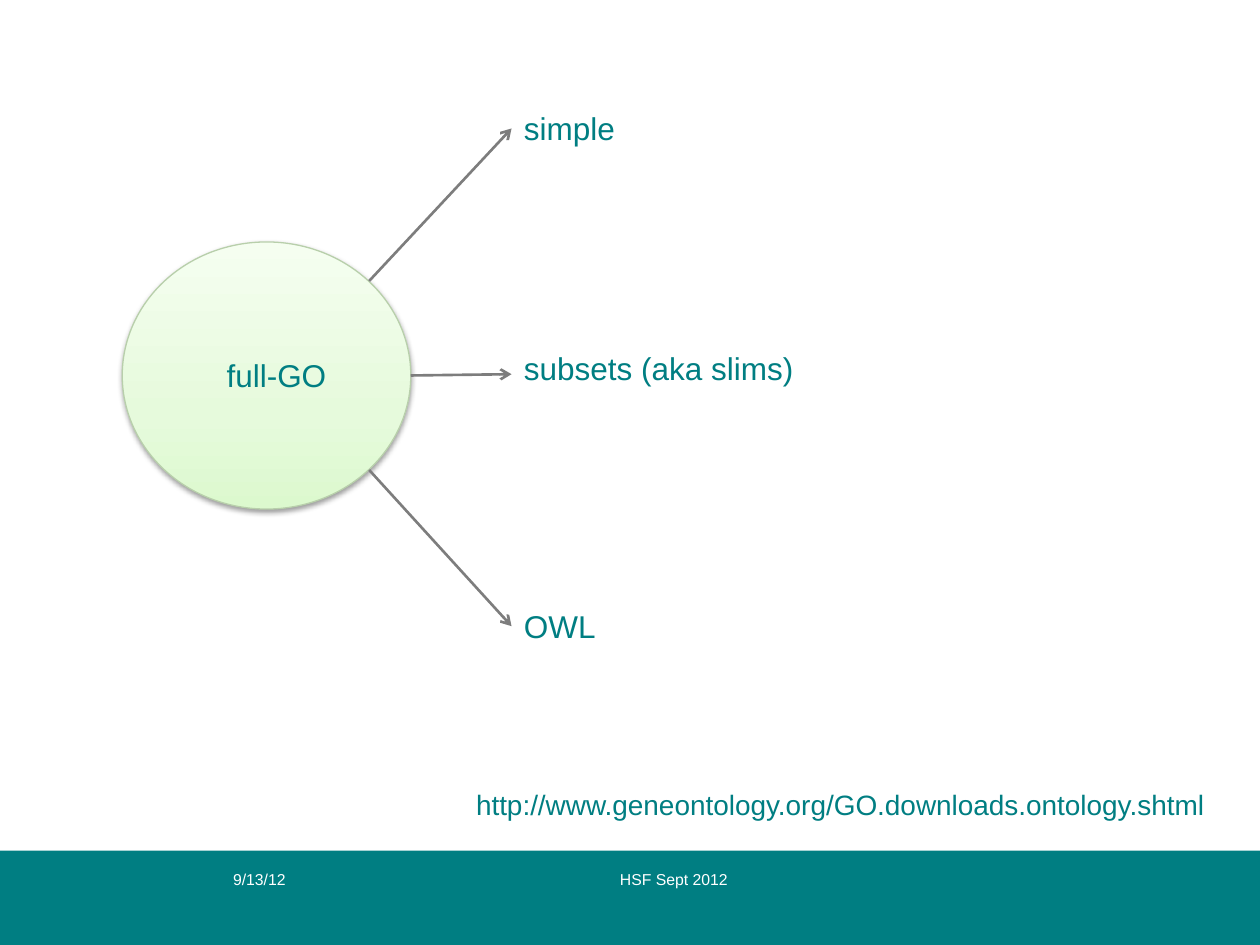
from dataclasses import dataclass

from lxml import etree
from pptx import Presentation
from pptx.dml.color import RGBColor
from pptx.enum.shapes import MSO_CONNECTOR, MSO_SHAPE
from pptx.enum.text import MSO_AUTO_SIZE
from pptx.oxml.ns import qn
from pptx.util import Inches, Pt

STRAIGHT = MSO_CONNECTOR.STRAIGHT
RECT = MSO_SHAPE.RECTANGLE
DISC = MSO_SHAPE.FLOWCHART_CONNECTOR
GROW = MSO_AUTO_SIZE.SHAPE_TO_FIT_TEXT
LEFT = 1


@dataclass(frozen=True)
class Theme:
    font: str = "Arial"
    teal: str = "007E82"
    white: str = "FFFFFF"
    gray: str = "7D7D7D"
    edge: str = "B8CFAB"
    shade: str = "000000"
    stops: tuple = ((0, "DCF9CE"), (35, "E6FADC"), (100, "F5FEF0"))
    body: int = 18
    link: int = 16
    foot: int = 9


def rgb(code):
    return RGBColor.from_string(code)


def node(parent, tag, **attrs):
    return etree.SubElement(parent, qn(tag), {k: str(v) for k, v in attrs.items()})


class Deck:
    def __init__(self, theme):
        self.theme = theme
        self.prs = Presentation()
        self.prs.slide_width = Inches(10)
        self.prs.slide_height = Inches(7.5)
        self.slide = self.prs.slides.add_slide(self.prs.slide_layouts[6])

    def band(self, *box):
        shape = self.slide.shapes.add_shape(RECT, *map(Inches, box))
        shape.shadow.inherit = False
        shape.fill.solid()
        shape.fill.fore_color.rgb = rgb(self.theme.teal)
        shape.line.fill.background()

    def disc(self, *box):
        shape = self.slide.shapes.add_shape(DISC, *map(Inches, box))
        shape.fill.gradient()
        shape.fill.gradient_angle = 90
        stops = shape.fill._fill._gradFill.find(qn("a:gsLst"))
        stops.clear()
        for place, code in self.theme.stops:
            node(node(stops, "a:gs", pos=place * 1000), "a:srgbClr", val=code)
        shape.line.color.rgb = rgb(self.theme.edge)
        shape.line.width = Pt(0.75)
        shape.shadow.inherit = False
        effects = shape._element.spPr.find(qn("a:effectLst"))
        shadow = node(effects, "a:outerShdw", blurRad=Pt(3.1), dist=Pt(1.6),
                      dir=5400000, rotWithShape=0)
        node(node(shadow, "a:srgbClr", val=self.theme.shade), "a:alpha", val=38000)

    def text(self, words, box, size, color, inset=True):
        shape = self.slide.shapes.add_textbox(*map(Inches, box))
        frame = shape.text_frame
        frame.word_wrap = True
        if inset:
            frame.auto_size = GROW
        else:
            frame.margin_left = frame.margin_right = 0
            frame.margin_top = frame.margin_bottom = 0
        run = frame.paragraphs[0].add_run()
        run.text = words
        run.font.name = self.theme.font
        run.font.size = Pt(size)
        run.font.color.rgb = rgb(color)
        return shape

    def label(self, words, left, top):
        return self.text(words, (left, top, 3, 0.4), self.theme.body, self.theme.teal)

    def arrow(self, start, end, target=None):
        line = self.slide.shapes.add_connector(STRAIGHT, *map(Inches, start + end))
        if target is not None:
            line.end_connect(target, LEFT)
        line.line.color.rgb = rgb(self.theme.gray)
        line.line.width = Pt(1.5)
        node(line.line._get_or_add_ln(), "a:tailEnd", type="arrow")
        node(line._element.spPr, "a:effectLst")

    def save(self):
        self.prs.save("out.pptx")


def main():
    theme = Theme()
    deck = Deck(theme)
    deck.band(0, 6.75, 10, 0.75)
    for words, left, width in (("HSF Sept 2012", 4.92, 3.17), ("9/13/12", 1.85, 1.83)):
        deck.text(words, (left, 6.9, width, 0.25), theme.foot, theme.white, inset=False)

    deck.disc(0.97, 1.92, 2.29, 2.12)
    deck.label("full-GO", 1.7, 2.78)

    edge = 4.06
    simple = deck.label("simple", edge, 0.82)
    deck.label("subsets (aka slims)", edge, 2.72)
    owl = deck.label("OWL", edge, 4.77)
    deck.arrow((2.93, 2.23), (edge, 1.02), simple)
    deck.arrow((3.26, 2.98), (edge, 2.97))
    deck.arrow((2.93, 3.73), (edge, 4.97), owl)

    deck.text("http://www.geneontology.org/GO.downloads.ontology.shtml",
              (3.68, 6.2, 6.94, 0.37), theme.link, theme.teal)
    deck.save()


if __name__ == "__main__":
    main()
